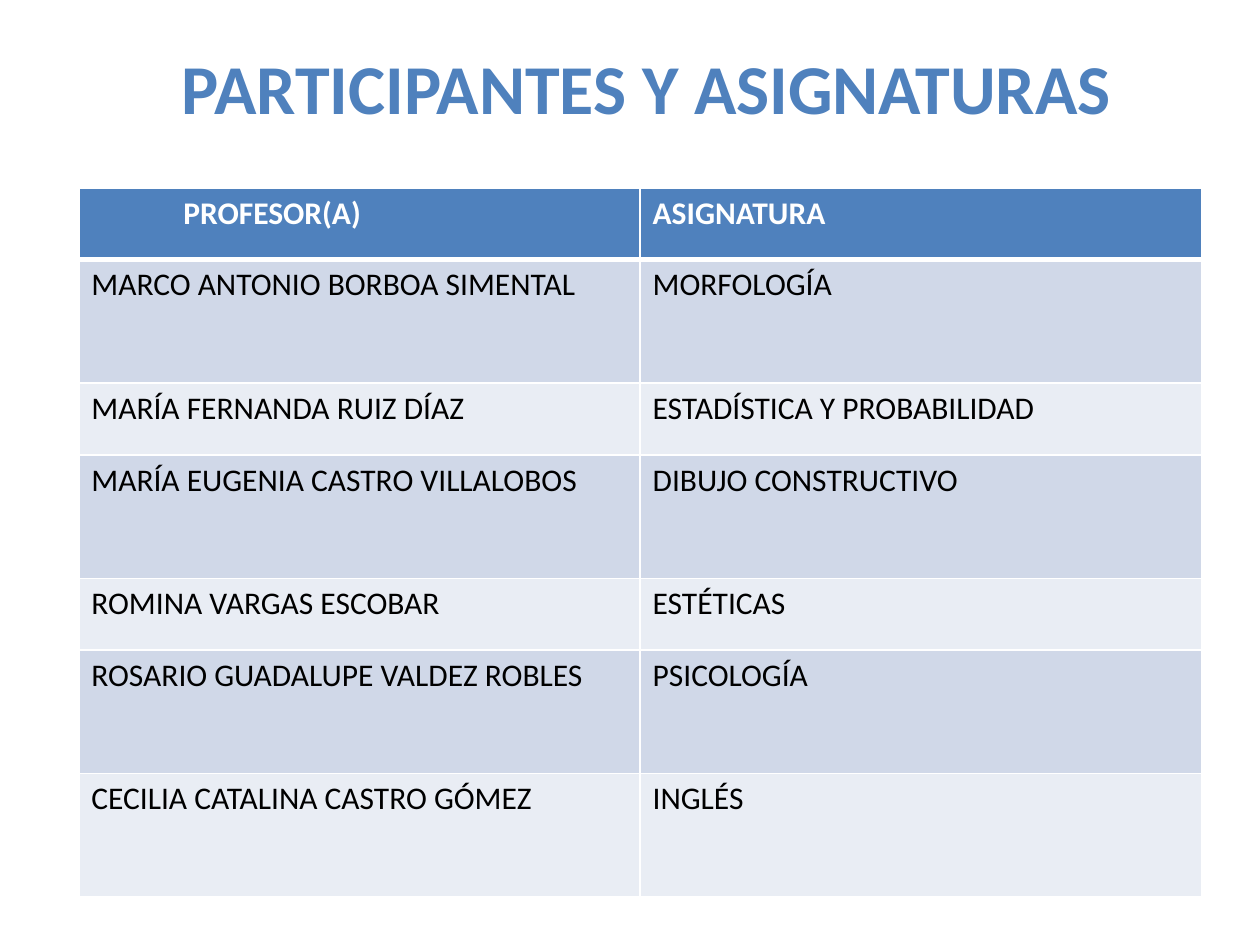
import pptx
import pptx.dml.color
import pptx.enum.text
import pptx.oxml
import pptx.oxml.ns
import pptx.util

WIDTH, HEIGHT = pptx.util.Inches(10), pptx.util.Inches(7.5)
FONT = "Calibri"
COLOURS = {
    "accent": "4F81BD",
    "band_dark": "D0D8E8",
    "band_light": "E9EDF4",
    "white": "FFFFFF",
    "black": "000000",
}
TITLE = "PARTICIPANTES Y ASIGNATURAS"
HEADINGS = ("PROFESOR(A)", "ASIGNATURA")
# Teacher, subject, and whether the row is tall
COURSES = [
    ("MARCO ANTONIO BORBOA SIMENTAL", "MORFOLOGÍA", True),
    ("MARÍA FERNANDA RUIZ DÍAZ", "ESTADÍSTICA Y PROBABILIDAD", False),
    ("MARÍA EUGENIA CASTRO VILLALOBOS", "DIBUJO CONSTRUCTIVO", True),
    ("ROMINA VARGAS ESCOBAR", "ESTÉTICAS", False),
    ("ROSARIO GUADALUPE VALDEZ ROBLES", "PSICOLOGÍA", True),
    ("CECILIA CATALINA CASTRO GÓMEZ", "INGLÉS", True),
]
# Boxes as shares of the slide: left, top, width, height
TITLE_BOX = (0.07, 0.041, 0.886, 0.103)
TABLE_BOX = (0.0625, 0.1987, 0.891, 0.751)
SHORT_ROW, TALL_ROW = 0.076, 0.1307
HEADING_INDENT = 0.083


def place(box):
    """Turn shares of the slide into lengths."""
    return [round(share * side) for share, side in zip(box, (WIDTH, HEIGHT) * 2)]


def rgb(name):
    return pptx.dml.color.RGBColor.from_string(COLOURS[name])


def write(frame, text, size, colour, bold):
    frame.text = text
    font = frame.paragraphs[0].runs[0].font
    font.name, font.size, font.bold = FONT, pptx.util.Pt(size), bold
    font.color.rgb = rgb(colour)


def set_borders(cell, widths):
    """Draw white borders; widths maps each side (L, R, T, B) to points."""
    properties = cell._tc.get_or_add_tcPr()
    for position, (side, points) in enumerate(widths.items()):
        line = pptx.oxml.parse_xml(
            f'<a:ln{side} {pptx.oxml.ns.nsdecls("a")} w="{pptx.util.Pt(points)}">'
            f'<a:solidFill><a:srgbClr val="{COLOURS["white"]}"/></a:solidFill>'
            f"</a:ln{side}>"
        )
        properties.insert(position, line)


def add_title(page, box):
    frame = page.shapes.add_textbox(*place(box)).text_frame
    frame.word_wrap = True
    write(frame, TITLE, 40, "accent", True)
    frame.paragraphs[0].alignment = pptx.enum.text.PP_ALIGN.CENTER


def fill_row(table, row, texts, fill, colour, heading=False):
    for column, text in enumerate(texts):
        cell = table.cell(row, column)
        write(cell.text_frame, text, 18, colour, heading)
        cell.fill.solid()
        cell.fill.fore_color.rgb = rgb(fill)
        top = 3 if row == 1 else 1
        set_borders(cell, {"L": 1, "R": 1, "T": top, "B": 3 if heading else 1})


def add_courses(page, box):
    rows, columns = len(COURSES) + 1, len(HEADINGS)
    table = page.shapes.add_table(rows, columns, *place(box)).table
    for column in table.columns:
        column.width = round(box[2] * WIDTH / columns)

    # Heading row
    table.rows[0].height = round(SHORT_ROW * HEIGHT)
    fill_row(table, 0, HEADINGS, "accent", "white", heading=True)
    table.cell(0, 0).margin_left = round(HEADING_INDENT * WIDTH)

    # Banded course rows
    for row, (teacher, subject, tall) in enumerate(COURSES, start=1):
        table.rows[row].height = round((TALL_ROW if tall else SHORT_ROW) * HEIGHT)
        band = "band_dark" if row % 2 else "band_light"
        fill_row(table, row, (teacher, subject), band, "black")


def main():
    deck = pptx.Presentation()
    deck.slide_width, deck.slide_height = WIDTH, HEIGHT
    page = deck.slides.add_slide(deck.slide_layouts[6])
    add_title(page, TITLE_BOX)
    add_courses(page, TABLE_BOX)
    deck.save("out.pptx")


if __name__ == "__main__":
    main()
